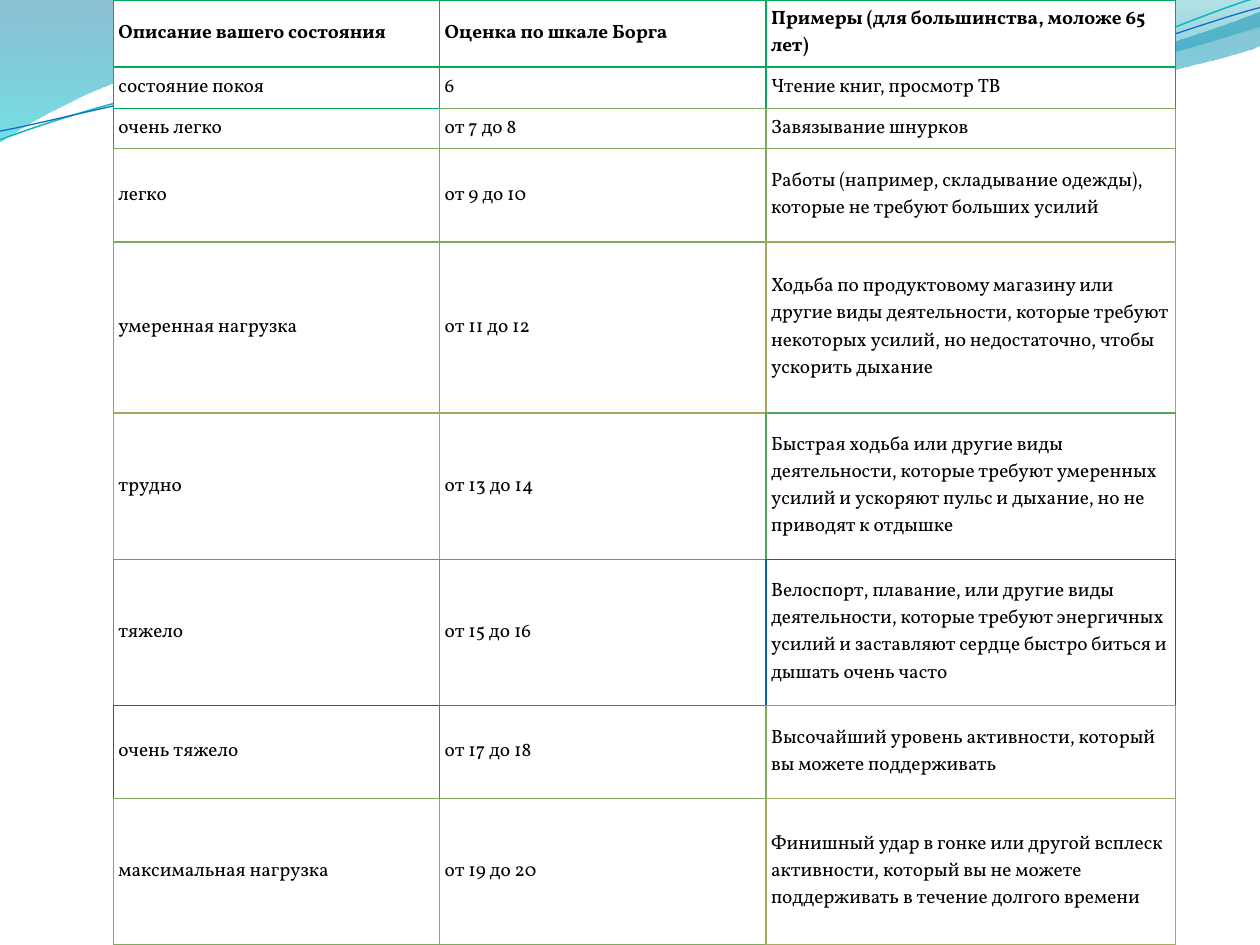
from dataclasses import dataclass
from math import cos, radians, sin

from lxml.etree import SubElement
from pptx import Presentation
from pptx.dml.color import RGBColor as Rgb
from pptx.enum.text import MSO_VERTICAL_ANCHOR as Anchor
from pptx.oxml.ns import qn
from pptx.util import Emu, Inches, Pt


@dataclass(frozen=True)
class Theme:
    font: str = "Vollkorn"
    text_size: float = 11
    text: str = "000000"
    paper: str = "FFFFFF"
    border: float = 1
    outer_border: float = 0.75
    cell_margin: float = 0.04
    # Wave gradients: (position, colour, opacity in percent)
    wide_wave: tuple = ((0, "0074A1", 45), (1, "00C6CF", 55))
    short_wave: tuple = ((0, "00A1A9", 30), (0.8, "008BBF", 45))
    teal: str = "0AB8BF"
    blue: str = "0F6FC6"


# Border colours of the table
GREEN, OLIVE, SAND, LEAF = "00A95E", "80A85E", "A8A75E", "50A85E"
NAVY, EMERALD, MOSS, STRAW = "0065AD", "00AB5E", "80AA5E", "A8AA5E"

# Each row: height, left and top border colour of each cell, texts
SCALE_ROWS = [
    (0.53, (GREEN, GREEN, GREEN),
     ("Описание вашего состояния", "Оценка по шкале Борга",
      "Примеры (для большинства, моложе 65 лет)")),
    (0.33, (GREEN, GREEN, GREEN),
     ("состояние покоя", "6", "Чтение книг, просмотр ТВ")),
    (0.32, (GREEN, OLIVE, OLIVE),
     ("очень легко", "от 7 до 8", "Завязывание шнурков")),
    (0.74, (OLIVE, OLIVE, OLIVE),
     ("легко", "от 9 до 10",
      "Работы (например, складывание одежды), которые не требуют больших усилий")),
    (1.36, (OLIVE, OLIVE, SAND),
     ("умеренная нагрузка", "от 11 до 12",
      "Ходьба по продуктовому магазину или другие виды деятельности, которые "
      "требуют некоторых усилий, но недостаточно, чтобы ускорить дыхание")),
    (1.16, (SAND, SAND, LEAF),
     ("трудно", "от 13 до 14",
      "Быстрая ходьба или другие виды деятельности, которые требуют умеренных "
      "усилий и ускоряют пульс и дыхание, но не приводят к отдышке")),
    (1.16, (LEAF, LEAF, NAVY),
     ("тяжело", "от 15 до 16",
      "Велоспорт, плавание, или другие виды деятельности, которые требуют "
      "энергичных усилий и заставляют сердце быстро биться и дышать очень часто")),
    (0.74, (NAVY, EMERALD, MOSS),
     ("очень тяжело", "от 17 до 18",
      "Высочайший уровень активности, который вы можете поддерживать")),
    (1.16, (MOSS, MOSS, STRAW),
     ("максимальная нагрузка", "от 19 до 20",
      "Финишный удар в гонке или другой всплеск активности, который вы не "
      "можете поддерживать в течение долгого времени")),
]


def turn(point, degrees, center):
    angle, (x, y), (cx, cy) = radians(degrees), point, center
    return (cx + (x - cx) * cos(angle) - (y - cy) * sin(angle),
            cy + (x - cx) * sin(angle) + (y - cy) * cos(angle))


class SlideMaker:
    """Lengths are columns and rows of a 10 by 7.5 grid."""
    columns, rows = 10, 7.5

    def __init__(self, deck, theme):
        self.deck, self.theme = deck, theme
        self.page = deck.slides.add_slide(deck.slide_layouts[6])

    def across(self, columns):
        return Emu(round(self.deck.slide_width * columns / self.columns))

    def down(self, rows):
        return Emu(round(self.deck.slide_height * rows / self.rows))

    def outline(self, shapes, box, steps, close, tilt=0):
        """Draw steps of one point (line) or three points (Bezier curve)."""
        left, top, width, height = box
        right, bottom = left + width, top + height
        builder = shapes.build_freeform(self.across(left), self.down(top), scale=1)
        builder.add_line_segments([(self.across(x), self.down(y)) for x, y in
                                   ((right, top), (right, bottom))], close=close)
        shape = builder.convert_to_shape()
        shape.shadow.inherit = False
        shape.rotation = tilt
        # Swap the straight segments for the real curve
        track = next(shape.element.iter(qn("a:path")))
        for child in list(track):
            track.remove(child)
        center = left + width / 2, top + height / 2
        for index, step in enumerate(steps):
            kind = "moveTo" if index == 0 else "lnTo" if len(step) == 1 else "cubicBezTo"
            segment = SubElement(track, qn(f"a:{kind}"))
            for point in step:
                x, y = turn(point, -tilt, center)
                SubElement(segment, qn("a:pt"), x=str(self.across(x - left)),
                           y=str(self.down(y - top)))
        if close:
            SubElement(track, qn("a:close"))
        return shape

    def wave(self, box, steps, stops):
        shape = self.outline(self.page.shapes, box, steps, close=True)
        shape.line.fill.background()
        shape.fill.gradient()
        shape.fill.gradient_angle = 270
        for stop, (position, color, _) in zip(shape.fill.gradient_stops, stops):
            stop.position = position
            stop.color.rgb = Rgb.from_string(color)
        for tag, (_, _, opacity) in zip(shape.element.iter(qn("a:srgbClr")), stops):
            SubElement(tag, qn("a:alpha"), val=str(opacity * 1000))

    def strand(self, group, box, steps, color, width):
        shape = self.outline(group.shapes, box, steps, close=False, tilt=357.3)
        shape.fill.background()
        shape.line.color.rgb = Rgb.from_string(color)
        shape.line.width = Pt(width)

    def border(self, cell, side, color, width):
        line = SubElement(cell._tc.get_or_add_tcPr(), qn(f"a:ln{side}"), w=str(Pt(width)))
        fill = SubElement(line, qn("a:solidFill"))
        SubElement(fill, qn("a:srgbClr"), val=color)

    def cell(self, cell, text, bold):
        theme = self.theme
        cell.fill.solid()
        cell.fill.fore_color.rgb = Rgb.from_string(theme.paper)
        cell.vertical_anchor = Anchor.MIDDLE
        cell.margin_left = cell.margin_right = Inches(theme.cell_margin)
        cell.margin_top = cell.margin_bottom = Inches(theme.cell_margin)
        span = cell.text_frame.paragraphs[0].add_run()
        span.text = text
        span.font.name, span.font.size = theme.font, Pt(theme.text_size)
        span.font.bold = bold
        span.font.color.rgb = Rgb.from_string(theme.text)

    def table(self, left, top, widths, rows):
        theme = self.theme
        table = self.page.shapes.add_table(
            len(rows), len(widths), self.across(left), self.down(top),
            self.across(sum(widths)), self.down(sum(row[0] for row in rows))).table
        table.first_row = table.horz_banding = False
        for column, width in zip(table.columns, widths):
            column.width = self.across(width)
        for r, (height, colors, texts) in enumerate(rows):
            table.rows[r].height = self.down(height)
            for c, (color, text) in enumerate(zip(colors, texts)):
                cell = table.cell(r, c)
                # Right and bottom borders take the neighbour's colour
                right = below = color, theme.outer_border
                if c + 1 < len(widths):
                    right = colors[c + 1], theme.border
                if r + 1 < len(rows):
                    below = rows[r + 1][1][c], theme.border
                self.border(cell, "L", color, theme.border)
                self.border(cell, "R", *right)
                self.border(cell, "T", color, theme.border)
                self.border(cell, "B", *below)
                self.cell(cell, text, bold=r == 0)


def main():
    deck, theme = Presentation(), Theme()
    deck.slide_width, deck.slide_height = Inches(10), Inches(7.5)
    maker = SlideMaker(deck, theme)

    # Waves along the top edge
    maker.wave((-0.01, -0.01, 10.02, 1.14),
               [[(0, 0)], [(4.4, -0.01)], [(4.76, 0.17), (6.64, 0.63), (7.58, 0.63)],
                [(8.53, 0.63), (9.58, 0.26), (10, 0.09)], [(10.01, 0.36)],
                [(9.83, 0.44), (8.7, 0.76), (7.46, 0.75)],
                [(6.22, 0.75), (3.82, 0.28), (2.57, 0.34)],
                [(1.29, 0.36), (0.46, 0.83), (-0.01, 1.13)], [(0, 0)]], theme.wide_wave)
    maker.wave((4.79, -0.01, 5.21, 0.7),
               [[(4.79, -0.01)], [(5.09, 0.11), (6.82, 0.62), (7.69, 0.65)],
                [(8.56, 0.69), (9.61, 0.32), (10, 0.21)], [(10, 0)],
                [(4.79, -0.01)]], theme.short_wave)

    # Thin strands over the waves
    strands = maker.page.shapes.add_group_shape()
    maker.strand(strands, (-0.02, 0.22, 10.02, 0.71),
                 [[(0, 1.11)], [(0.48, 0.93), (1.58, 0.57), (2.77, 0.52)],
                  [(3.95, 0.47), (5.93, 0.89), (7.13, 0.8)],
                  [(8.33, 0.71), (9.38, 0.15), (9.98, -0.02)]], theme.teal, 0.85)
    maker.strand(strands, (-0.02, 0.3, 10.03, 0.58),
                 [[(0, 1.04)], [(0.47, 0.96), (1.64, 0.61), (2.83, 0.56)],
                  [(4.03, 0.51), (5.97, 0.84), (7.17, 0.75)],
                  [(8.36, 0.67), (9.41, 0.21), (10, 0.06)]], theme.blue, 0.75)

    # Borg scale table
    maker.table(0.9, 0, (2.59, 2.59, 3.25), SCALE_ROWS)
    deck.save("out.pptx")


if __name__ == "__main__":
    main()
